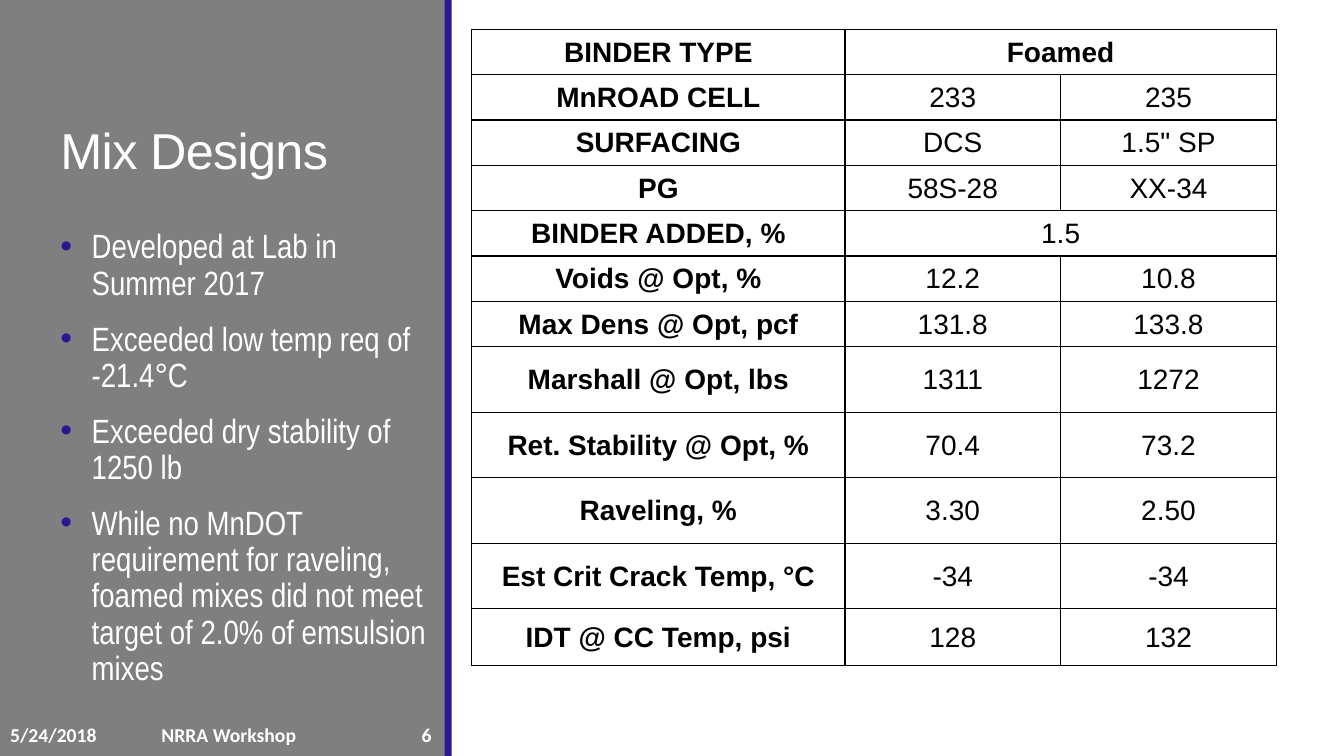
from dataclasses import dataclass

from lxml import etree
from pptx import Presentation
from pptx.dml.color import RGBColor
from pptx.enum import shapes, text
from pptx.oxml import ns
from pptx.util import Inches, Pt

LEFT, MID, RIGHT = text.PP_ALIGN.LEFT, text.PP_ALIGN.CENTER, text.PP_ALIGN.RIGHT
PLAIN = "{2D5ABB26-0587-4C30-8999-92F81FD0307C}"  # table style without grid


@dataclass(frozen=True)
class Theme:
    panel: str = "7F7F7F"
    accent: str = "2F1494"
    light: str = "FFFFFF"
    dark: str = "000000"
    head: str = "Arial"
    body: str = "Arial Narrow"
    foot: str = "Calibri"
    title: int = 36
    list: int = 24
    cell: int = 20
    small: int = 14


@dataclass(frozen=True)
class Box:
    left: float
    top: float
    width: float
    height: float

    def place(self) -> tuple:
        return tuple(Inches(n) for n in (self.left, self.top, self.width, self.height))


@dataclass(frozen=True)
class Bar:
    box: Box
    fill: str


@dataclass(frozen=True)
class Row:
    label: str
    values: tuple
    height: float = 0.45


LOOK = Theme()
BARS = [
    Bar(Box(0, 0, 4.42, 7.5), LOOK.panel),
    Bar(Box(4.41, 0, 0.07, 7.5), LOOK.accent),
]
POINTS = [
    "Developed at Lab in Summer 2017",
    "Exceeded low temp req of -21.4°C",
    "Exceeded dry stability of 1250 lb",
    "While no MnDOT requirement for raveling, foamed mixes did not meet "
    "target of 2.0% of emsulsion mixes",
]
FOOT = [("5/24/2018", LEFT), ("NRRA Workshop", MID), ("6", RIGHT)]
ROWS = [
    Row("BINDER TYPE", ("Foamed",)),
    Row("MnROAD CELL", ("233", "235")),
    Row("SURFACING", ("DCS", '1.5" SP')),
    Row("PG", ("58S-28", "XX-34")),
    Row("BINDER ADDED, %", ("1.5",)),
    Row("Voids @ Opt, %", ("12.2", "10.8")),
    Row("Max Dens @ Opt, pcf", ("131.8", "133.8")),
    Row("Marshall @ Opt, lbs", ("1311", "1272"), 0.65),
    Row("Ret. Stability @ Opt, %", ("70.4", "73.2"), 0.65),
    Row("Raveling, %", ("3.30", "2.50"), 0.65),
    Row("Est Crit Crack Temp, °C", ("-34", "-34"), 0.65),
    Row("IDT @ CC Temp, psi", ("128", "132"), 0.56),
]


def style(font, face: str, size: int, color: str, bold: bool = False) -> None:
    font.name, font.size, font.bold = face, Pt(size), bold
    font.color.rgb = RGBColor.from_string(color)


def add_bar(slide, bar: Bar, depth: int) -> None:
    shape = slide.shapes.add_shape(shapes.MSO_SHAPE.RECTANGLE, *bar.box.place())
    shape.shadow.inherit = False
    shape.fill.solid()
    shape.fill.fore_color.rgb = RGBColor.from_string(bar.fill)
    shape.line.fill.background()
    slide.shapes._spTree.insert(2 + depth, shape._element)  # behind the text


def add_grid(slide, box: Box, widths: list, heights: list):
    frame = slide.shapes.add_table(len(heights), len(widths), *box.place())
    table = frame.table
    table.first_row = table.horz_banding = False
    table._tbl.tblPr.find(ns.qn("a:tableStyleId")).text = PLAIN
    for col, width in zip(table.columns, widths):
        col.width = Inches(width)
    for row, height in zip(table.rows, heights):
        row.height = Inches(height)
    return table


def fill_cell(cell, words: str, align, face: str, size: int, color: str, bold: bool) -> None:
    cell.text_frame.text = words
    cell.vertical_anchor = text.MSO_ANCHOR.MIDDLE
    cell.fill.background()
    para = cell.text_frame.paragraphs[0]
    para.alignment = align
    for run in para.runs:
        style(run.font, face, size, color, bold)


def add_edges(cell, color: str) -> None:
    props = cell._tc.get_or_add_tcPr()
    for place, side in enumerate(("lnL", "lnR", "lnT", "lnB")):
        line = etree.Element(ns.qn(f"a:{side}"), w=str(Pt(1)))
        fill = etree.SubElement(line, ns.qn("a:solidFill"))
        etree.SubElement(fill, ns.qn("a:srgbClr"), val=color)
        props.insert(place, line)


def add_bullet(para, color: str) -> None:
    props = para._p.get_or_add_pPr()
    props.set("marL", str(Inches(0.31)))
    props.set("indent", str(-Inches(0.31)))
    tint = etree.SubElement(props, ns.qn("a:buClr"))
    etree.SubElement(tint, ns.qn("a:srgbClr"), val=color)
    etree.SubElement(props, ns.qn("a:buFont"), typeface="Arial")
    etree.SubElement(props, ns.qn("a:buChar"), char="•")


def set_title(shape, words: str) -> None:
    shape.left, shape.top, shape.width, shape.height = Box(0.5, 0.2, 3.5, 1.63).place()
    frame = shape.text_frame
    frame.text = words
    frame.auto_size = text.MSO_AUTO_SIZE.NONE
    frame.vertical_anchor = text.MSO_ANCHOR.BOTTOM
    para = frame.paragraphs[0]
    para.alignment, para.line_spacing = LEFT, 0.85
    run = para.runs[0]
    style(run.font, LOOK.head, LOOK.title, LOOK.light)
    run._r.get_or_add_rPr().set("spc", "-50")


def set_list(shape, points: list) -> None:
    shape.left, shape.top, shape.width, shape.height = Box(0.5, 2.23, 3.84, 4.67).place()
    frame = shape.text_frame
    frame.text = "\n".join(points)
    frame.auto_size = text.MSO_AUTO_SIZE.NONE
    for place, para in enumerate(frame.paragraphs):
        add_bullet(para, LOOK.accent)
        para.line_spacing = 0.9
        para.space_before, para.space_after = Pt(12 if place else 0), Pt(2)
        style(para.runs[0].font, LOOK.body, LOOK.list, LOOK.light)


def add_foot(slide) -> None:
    grid = add_grid(slide, Box(0, 7.13, 4.38, 0.33), [1.15, 2.24, 0.99], [0.31])
    for cell, (words, align) in zip(grid.rows[0].cells, FOOT):
        fill_cell(cell, words, align, LOOK.foot, LOOK.small, LOOK.light, True)


def add_mixes(slide) -> None:
    heights = [row.height for row in ROWS]
    grid = add_grid(slide, Box(4.68, 0.29, 7.98, 6.34), [3.7, 2.14, 2.14], heights)
    for y, row in enumerate(ROWS):
        if len(row.values) == 1:
            grid.cell(y, 1).merge(grid.cell(y, 2))
        for x, words in enumerate((row.label, *row.values)):
            bold = x == 0 or y == 0
            fill_cell(grid.cell(y, x), words, MID, LOOK.head, LOOK.cell, LOOK.dark, bold)
        for cell in grid.rows[y].cells:
            cell.margin_left = cell.margin_right = cell.margin_top = Inches(0.01)
            cell.margin_bottom = 0
            add_edges(cell, LOOK.dark)


def main() -> None:
    deck = Presentation()
    deck.slide_width, deck.slide_height = Inches(13.33), Inches(7.5)
    slide = deck.slides.add_slide(deck.slide_layouts[1])

    # Side panel
    for depth, bar in enumerate(BARS):
        add_bar(slide, bar, depth)

    # Title and list
    set_title(slide.shapes.title, "Mix Designs")
    set_list(slide.placeholders[1], POINTS)

    # Tables
    add_foot(slide)
    add_mixes(slide)
    deck.save("out.pptx")


if __name__ == "__main__":
    main()
